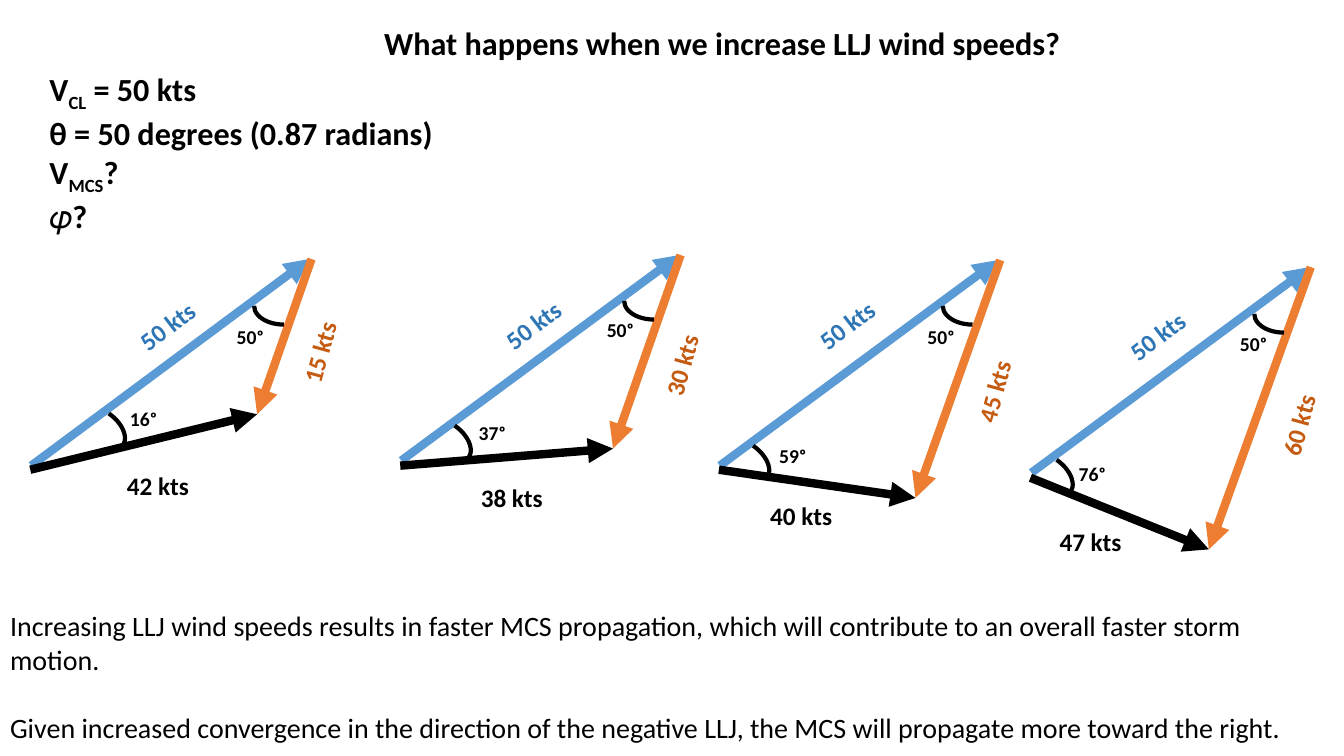
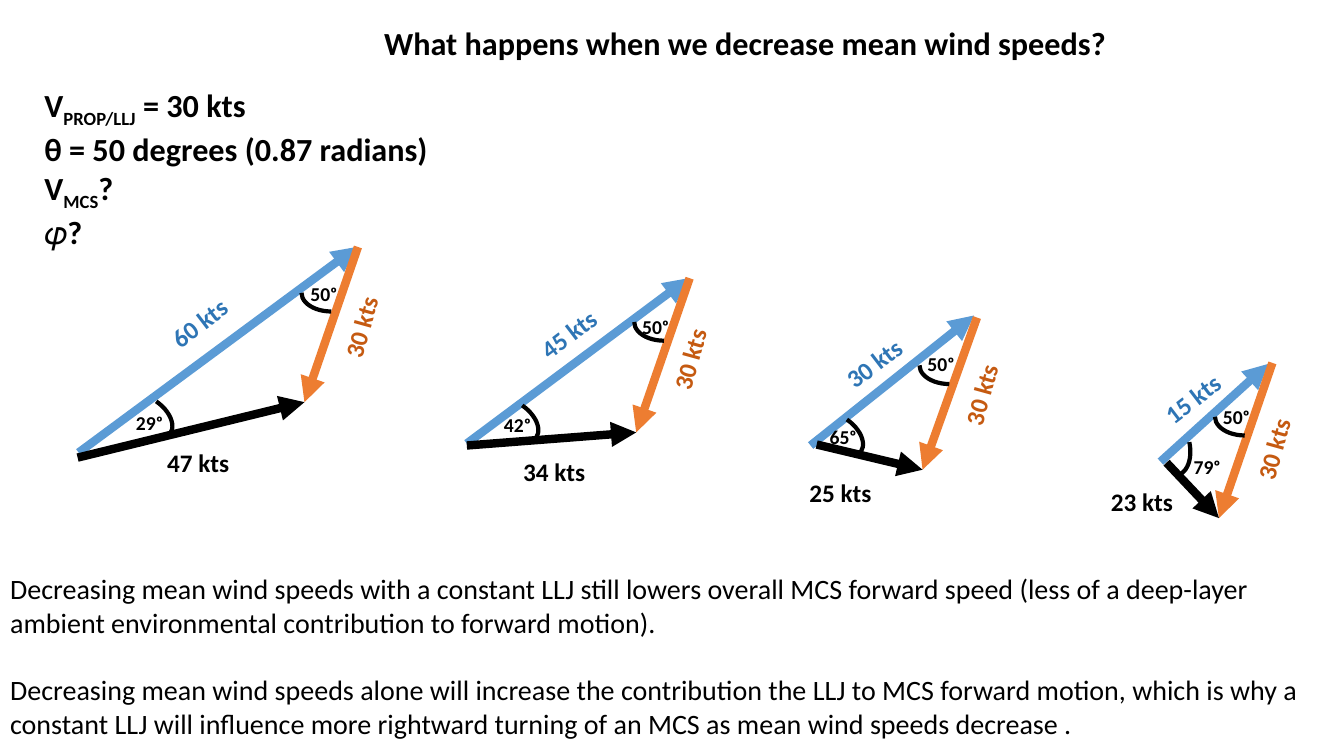
from collections import namedtuple
from pptx import Presentation as Deck
from pptx.dml.color import RGBColor as Rgb
from pptx.enum.shapes import MSO_CONNECTOR as Link, MSO_SHAPE as Form
from pptx.enum.text import MSO_ANCHOR as Anchor, MSO_AUTO_SIZE as Fit, PP_ALIGN as Align
from pptx.oxml.ns import qn
from pptx.util import Inches, Pt
from lxml.etree import SubElement as Sub

COLS, ROWS = 133.3, 75
CELL = Inches(0.1)
BLACK, BLUE, ORANGE = "000000", "5B9BD5", "ED7D31"
NAVY, RUST = "2E75B5", "C55A11"

HEAD = {"name": "Calibri", "size": Pt(23), "bold": True}
NOTE = {"name": "Calibri", "size": Pt(20), "bold": False}
SPEED = {"name": "Calibri", "size": Pt(18), "bold": True}
ANGLE = {"name": "Calibri", "size": Pt(14), "bold": True}
FRAME = {"auto_size": Fit.NONE, "vertical_anchor": Anchor.TOP,
         "margin_left": CELL, "margin_right": CELL}

Wind = namedtuple("Wind", "foot base tip jet head low high mean llj net turn bend spin",
                  defaults=[34.5])


def hue(code):
    return Rgb.from_string(code)


def put(item, form):
    for key, val in form.items():
        setattr(item, key, val)


def grid(*cells):
    return [round(n * CELL) for n in cells]


class Board:
    def __init__(self):
        self.deck = Deck()
        self.deck.slide_width, self.deck.slide_height = grid(COLS, ROWS)
        self.slide = None

    def page(self):
        self.slide = self.deck.slides.add_slide(self.deck.slide_layouts[3])

    def fill(self, frame, lines, form, code=BLACK, gap=0, pad=0.5, wrap=True):
        put(frame, FRAME)
        put(frame, {"margin_top": grid(pad)[0], "margin_bottom": grid(pad)[0],
                    "word_wrap": wrap})
        for i, line in enumerate(lines):
            para = frame.paragraphs[0] if i == 0 else frame.add_paragraph()
            put(para, {"alignment": Align.LEFT, "space_before": Pt(gap if i else 0),
                       "space_after": Pt(0), "line_spacing": 1.0})
            props = para._p.get_or_add_pPr()
            props.set("marL", "0")
            props.set("indent", "0")
            Sub(props, qn("a:buNone"))
            for j, part in enumerate(line.split("|")):
                run = para.add_run()
                run.text = part
                put(run.font, form)
                run.font.color.rgb = hue(code)
                if j % 2:
                    run._r.get_or_add_rPr().set("baseline", "-25000")

    def hold(self, slot, box, lines, form, **more):
        shape = self.slide.placeholders[slot]
        put(shape, dict(zip(("left", "top", "width", "height"), grid(*box))))
        self.fill(shape.text_frame, lines, form, **more)

    def label(self, spot, size, text, form, code=BLACK, turn=0):
        box = self.slide.shapes.add_textbox(*grid(*spot, *size))
        box.rotation = turn
        self.fill(box.text_frame, [text], form, code, wrap=False)

    def speed(self, text, x, y, code=BLACK, turn=0):
        self.label((x, y), (8.2, 4), text + " kts", SPEED, code, turn)

    def angle(self, text, x, y):
        self.label((x, y), (4.7, 3.4), text + "ᵒ", ANGLE)

    def arrow(self, start, end, code):
        line = self.slide.shapes.add_connector(Link.STRAIGHT, *grid(*start, *end))
        line.line.width = Pt(6)
        line.line.color.rgb = hue(code)
        props = line._element.spPr
        Sub(props.get_or_add_ln(), qn("a:tailEnd"), type="triangle")
        Sub(props, qn("a:effectLst"))

    def arc(self, spot, turn):
        arc = self.slide.shapes.add_shape(Form.ARC, *grid(*spot, 5.9, 3.7))
        arc.shadow.inherit = False
        arc.fill.background()
        arc.line.width = Pt(3)
        arc.line.color.rgb = hue(BLACK)
        arc.rotation = turn

    def wind(self, w):
        self.arrow(w.foot, w.tip, BLUE)
        self.arrow(w.jet, w.head, ORANGE)
        self.arrow(w.base, w.head, BLACK)
        self.arc(w.high, 180)
        self.arc(w.low, w.spin)
        self.speed(*w.mean, NAVY, 322.6)
        self.speed(*w.llj, RUST, 285.4)
        self.speed(*w.net)
        self.angle(*w.turn)
        self.angle("50", *w.bend)

    def build(self, title, wide, given, spot, notes, top, winds):
        self.page()
        self.hold(0, (37.1, 1.8, wide, 4.9), [title], HEAD)
        self.hold(1, (*spot, 70, 16.5),
                  [given, "θ = 50 degrees (0.87 radians)", "V|MCS|?", "𝜑?"], HEAD)
        self.hold(2, (0, top, COLS, ROWS - top), notes, NOTE, gap=24.4, pad=1)
        for row in winds:
            self.wind(Wind(*row))


FASTER = [
    ((3.1, 46.2), (3, 46.6), (30.7, 25.7), (30.9, 25.7), (25.5, 41.1), (6.8, 40.7), (25.2, 28.5),
     ("50", 12.5, 30.3), ("15", 27.6, 32.9), ("42", 11.6, 46.2), ("16", 11.9, 39.9), (22.5, 31.7)),
    ((39.8, 45.7), (39.7, 46.2), (67.4, 25.3), (67.5, 25.3), (60.8, 44.5), (41.1, 41.9), (61.9, 28),
     ("50", 48.8, 30.2), ("30", 63.5, 34.2), ("38", 46.7, 47.4), ("37", 46.5, 41.3), (59.2, 31.1)),
    ((71.4, 46.2), (71.3, 46.6), (99, 25.8), (99.2, 25.8), (90.8, 49.4), (70.7, 43.9), (93.5, 28.5),
     ("50", 79.9, 30.2), ("45", 94.5, 36.8), ("40", 75.4, 49.1), ("59", 76.3, 43.5), (91, 31.7)),
    ((102.3, 46.9), (102.2, 47.4), (129.9, 26.5), (130, 26.5), (119.9, 54.5), (100.8, 45.3), (124.4, 29.3),
     ("50", 110.7, 31.3), ("60", 124.7, 40.1), ("47", 104.1, 51.7), ("76", 106, 45.3), (122, 32.4)),
]
SLOWER = [
    ((7.8, 44.9), (7.7, 45.4), (35.4, 24.5), (35.5, 24.5), (30.2, 39.9), (11.5, 39.5), (29.9, 27.2),
     ("60", 15.7, 30), ("30", 31.7, 30.4), ("47", 15.6, 43.9), ("29", 12.5, 40.3), (29.8, 27.5)),
    ((46.3, 44), (46.3, 44.2), (68.3, 27.6), (68.4, 27.6), (63.1, 42.9), (47.8, 39.9), (62.9, 30.1),
     ("45", 52.3, 31.1), ("30", 64.3, 33.6), ("34", 50.9, 44.8), ("42", 49, 40.5), (62.7, 30.8)),
    ((80.4, 44.2), (81, 44.1), (96.6, 31.3), (96.9, 31.5), (91.5, 46.6), (80, 41.3), (91.2, 34.4),
     ("30", 82.6, 34), ("30", 93.2, 37.1), ("25", 79.3, 46.9), ("65", 81.3, 41.7), (91, 34.4)),
    ((115.1, 45.8), (115.7, 45.9), (125.8, 36.1), (126.2, 36), (120.9, 51.4), (113.2, 42.4), (120.5, 39.5),
     ("15", 114.2, 37.5), ("30", 122.2, 42.5), ("23", 109.2, 47.8), ("79", 117.4, 44.6), (120.3, 39.7), 77.8),
]


def main():
    board = Board()
    board.build(
        "What happens when we increase LLJ wind speeds?", 73.3,
        "V|CL| = 50 kts", (3.9, 6.4),
        ["Increasing LLJ wind speeds results in faster MCS propagation, which will contribute "
         "to an overall faster storm motion.",
         "Given increased convergence in the direction of the negative LLJ, the MCS will "
         "propagate more toward the right."], 59.4, FASTER)
    board.build(
        "What happens when we decrease mean wind speeds?", 76.1,
        "V|PROP/LLJ| = 30 kts", (3.4, 8),
        ["Decreasing mean wind speeds with a constant LLJ still lowers overall MCS forward speed "
         "(less of a deep-layer ambient environmental contribution to forward motion).",
         "Decreasing mean wind speeds alone will increase the contribution the LLJ to MCS forward "
         "motion, which is why a constant LLJ will influence more rightward turning of an MCS as "
         "mean wind speeds decrease ."], 55.7, SLOWER)
    board.deck.save("out.pptx")


if __name__ == "__main__":
    main()
